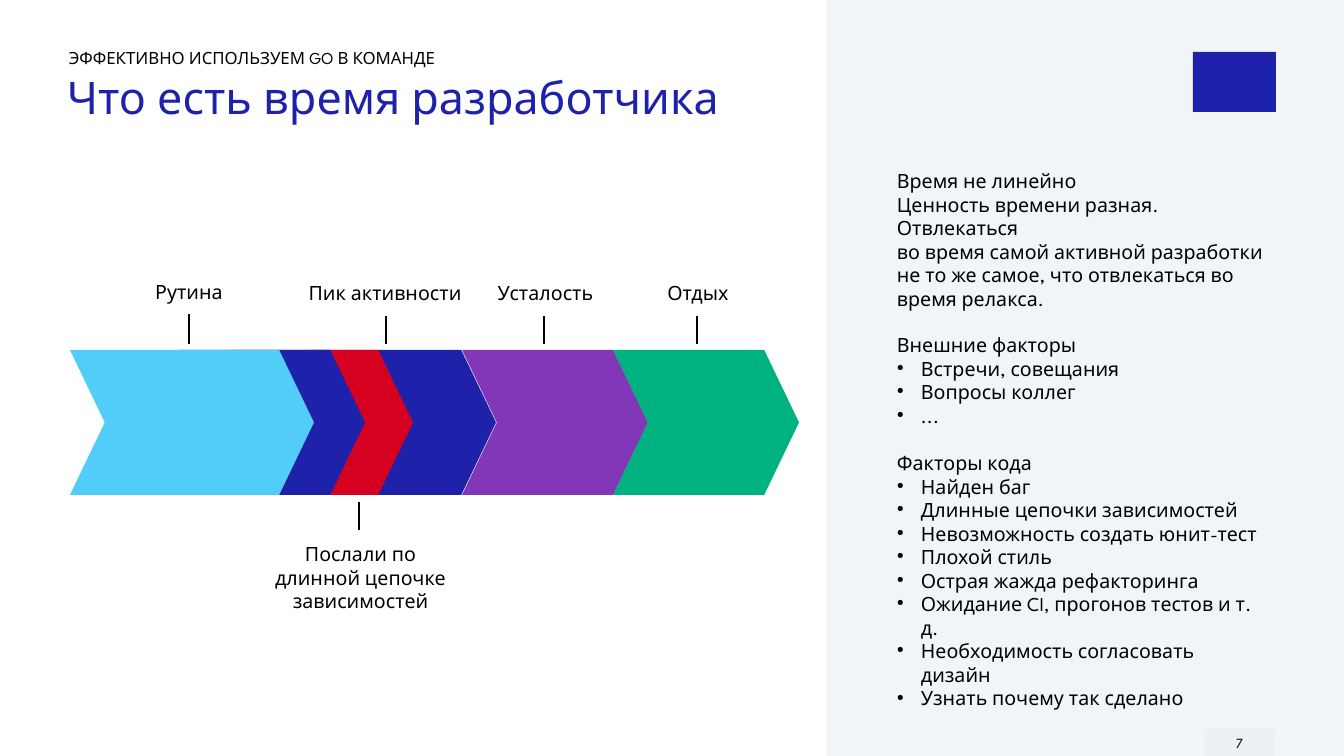
from lxml import etree
from pptx import Presentation
from pptx.dml.color import RGBColor
from pptx.enum.shapes import MSO_CONNECTOR, MSO_SHAPE
from pptx.enum.text import MSO_ANCHOR, MSO_AUTO_SIZE, PP_ALIGN
from pptx.oxml.ns import qn
from pptx.util import Pt

RECT, CHEVRON = MSO_SHAPE.RECTANGLE, MSO_SHAPE.CHEVRON
STRAIGHT = MSO_CONNECTOR.STRAIGHT
LEFT, CENTER = PP_ALIGN.LEFT, PP_ALIGN.CENTER
MIDDLE = MSO_ANCHOR.MIDDLE
GROW, FIXED = MSO_AUTO_SIZE.SHAPE_TO_FIT_TEXT, MSO_AUTO_SIZE.NONE
FONT = "League Spartan"
BLACK, NAVY = "000000", "1E22AA"
EMU_PER_PX = 914400 / 100.8
BAND_TOP, BAND_HEIGHT = 350, 145
PANEL_LEFT, PANEL_WIDTH = 887, 392

STAGES = [
    (310, 186, NAVY),
    (227, 186, "D60020"),
    (179, 186, NAVY),
    (462, 186, "8137B8"),
    (613, 186, "00B27F"),
    (70, 244, "52CCF8"),
]
LABELS = [
    ("Рутина", (99, 275, 180, 38)),
    ("Пик активности", (296, 276, 178, 39)),
    ("Усталость", (466, 276, 159, 39)),
    ("Отдых", (619, 276, 158, 39)),
    ("Послали по длинной цепочке зависимостей", (250, 537, 221, 67)),
]
TICKS = [
    (189, 314, 189, 344),
    (386, 316, 386, 344),
    (544, 316, 544, 344),
    (697, 316, 697, 344),
    (359, 502, 359, 530),
]
TIME_NOTES = [
    "Время не линейно",
    "Ценность времени разная. Отвлекаться\n"
    "во время самой активной разработки\n"
    "не то же самое, что отвлекаться во время релакса.",
]
FACTORS = [
    (328, 104, "Внешние факторы", ["Встречи, совещания", "Вопросы коллег", "..."]),
    (446, 222, "Факторы кода", [
        "Найден баг",
        "Длинные цепочки зависимостей",
        "Невозможность создать юнит-тест",
        "Плохой стиль",
        "Острая жажда рефакторинга",
        "Ожидание CI, прогонов тестов и т. д.",
        "Необходимость согласовать дизайн",
        "Узнать почему так сделано",
    ]),
]


def px(n):
    return round(n * EMU_PER_PX)


def rgb(color):
    return RGBColor.from_string(color)


def add_bullet(p):
    pPr = p._p.get_or_add_pPr()
    pPr.set("marL", str(px(24)))
    pPr.set("indent", str(px(-24)))
    clr = etree.SubElement(pPr, qn("a:buClr"))
    etree.SubElement(clr, qn("a:srgbClr"), val=BLACK)
    etree.SubElement(pPr, qn("a:buSzPct"), val="45000")
    etree.SubElement(pPr, qn("a:buChar"), char="●")


def write(p, text, size=14, color=BLACK, align=LEFT):
    p.alignment = align
    for i, line in enumerate(text.split("\n")):
        if i:
            p.add_line_break()
        r = p.add_run()
        r.text = line
        for name, value in {"size": Pt(size), "name": FONT}.items():
            setattr(r.font, name, value)
        r.font.color.rgb = rgb(color)


def add_text(s, box, lines, bullets=(), fit=GROW, spacing=None, **style):
    tf = s.shapes.add_textbox(*map(px, box)).text_frame
    for name, value in {"word_wrap": True, "auto_size": fit}.items():
        setattr(tf, name, value)
    for i, text in enumerate([*lines, *bullets]):
        p = tf.add_paragraph() if i else tf.paragraphs[0]
        if spacing:
            p.line_spacing = spacing
        if i >= len(lines):
            add_bullet(p)
        write(p, text, **style)


def add_shape(s, kind, box, color):
    sp = s.shapes.add_shape(kind, *map(px, box))
    sp.shadow.inherit = False
    sp.fill.solid()
    sp.fill.fore_color.rgb = rgb(color)
    sp.line.fill.background()
    return sp


def add_stage(s, left, width, color):
    sp = add_shape(s, CHEVRON, (left, BAND_TOP, width, BAND_HEIGHT), color)
    sp.adjustments[0] = 0.24


def add_tick(s, ends):
    line = s.shapes.add_connector(STRAIGHT, *map(px, ends))
    line.line.color.rgb = rgb(BLACK)
    line.line.width = Pt(1)
    etree.SubElement(line._element.spPr, qn("a:effectLst"))


def add_page_number(s, number):
    sp = add_shape(s, RECT, (1204, 729, 71, 27), "E6ECF2")
    clr = sp._element.spPr.find(qn("a:solidFill"))[0]
    etree.SubElement(clr, qn("a:alpha"), val="50000")
    tf = sp.text_frame
    tf.vertical_anchor = MIDDLE
    write(tf.paragraphs[0], number, size=10, align=CENTER)


def main():
    prs = Presentation()
    prs.slide_width, prs.slide_height = px(1344), px(756)
    s = prs.slides.add_slide(prs.slide_layouts[6])

    add_shape(s, RECT, (827, 0, 517, 756), "F2F5F8")
    add_shape(s, RECT, (1193, 52, 83, 60), NAVY)
    add_page_number(s, "7")

    add_text(s, (59, 43, 466, 30), ["ЭФФЕКТИВНО ИСПОЛЬЗУЕМ GO В КОМАНДЕ"], size=12)
    add_text(s, (57, 73, 883, 55), ["Что есть время разработчика"],
             spacing=0.85, size=32, color=NAVY)
    add_text(s, (PANEL_LEFT, 164, PANEL_WIDTH, 151), TIME_NOTES)
    for top, height, heading, factors in FACTORS:
        add_text(s, (PANEL_LEFT, top, PANEL_WIDTH, height), [heading], factors)

    for stage in STAGES:
        add_stage(s, *stage)
    for text, box in LABELS:
        add_text(s, box, [text], fit=FIXED, align=CENTER)
    for ends in TICKS:
        add_tick(s, ends)

    prs.save("out.pptx")


if __name__ == "__main__":
    main()
